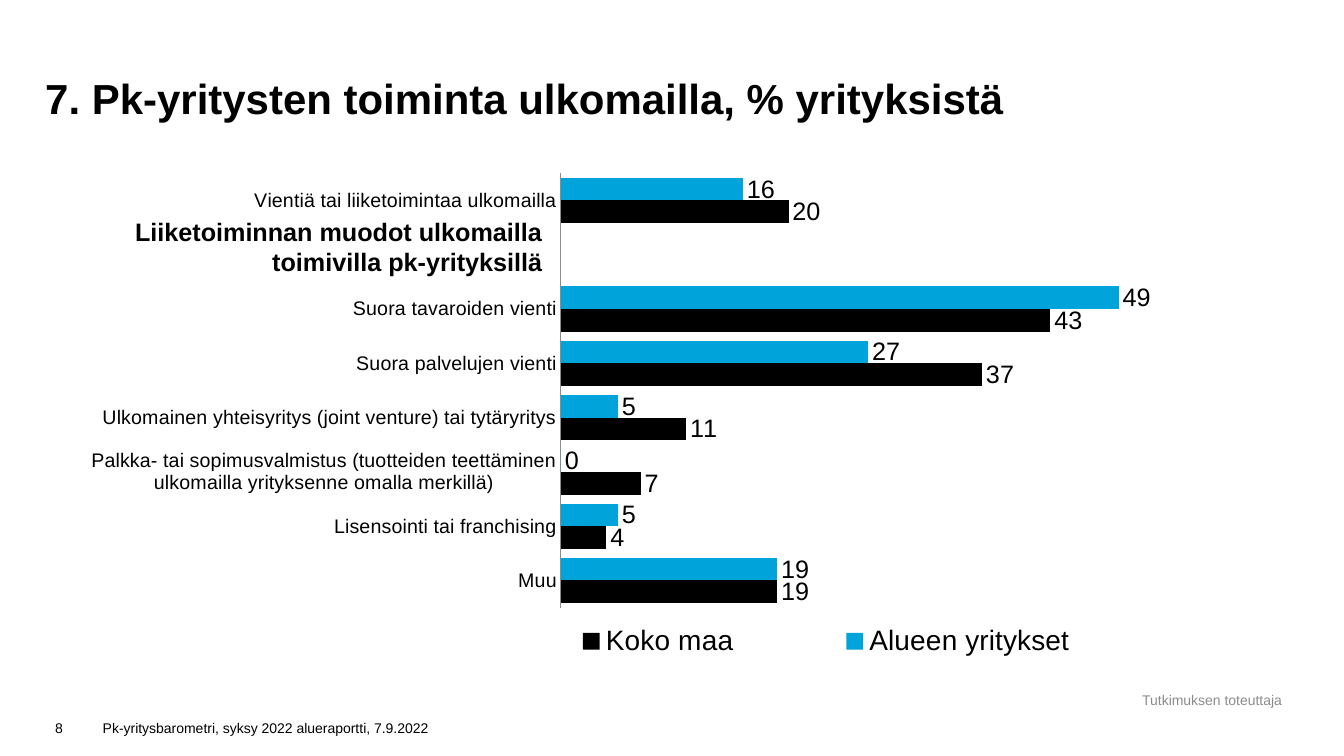
from lxml import etree
from pptx import Presentation, util as u
from pptx.chart.data import CategoryChartData
from pptx.dml.color import RGBColor
from pptx.enum import chart as ch, text as tx

THEME = {
    "font": "Arial",
    "black": RGBColor.from_string("000000"),
    "blue": RGBColor.from_string("00A3DA"),
    "grey": RGBColor.from_string("8C8C8C"),
    "title": u.Pt(30), "legend": u.Pt(20), "head": u.Pt(18),
    "label": u.Pt(14), "small": u.Pt(10),
}
LEFT, TOP, MID, LOW = (tx.PP_ALIGN.LEFT, tx.MSO_ANCHOR.TOP,
                       tx.MSO_ANCHOR.MIDDLE, tx.MSO_ANCHOR.BOTTOM)


def style(font, size, color="black", bold=False):
    form = {"name": THEME["font"], "size": THEME[size], "bold": bold}
    for key, value in form.items():
        setattr(font, key, value)
    font.color.rgb = THEME[color]


def place(parent, index, frame, inner=False):
    """Give a chart part a fixed frame, as shares of the chart's size."""
    for old in parent.findall("{*}layout"):
        parent.remove(old)
    space = etree.QName(parent).namespace
    layout = etree.Element(f"{{{space}}}layout")
    manual = etree.SubElement(layout, f"{{{space}}}manualLayout")
    rows = [("layoutTarget", "inner")] if inner else []
    rows += [("xMode", "edge"), ("yMode", "edge"), *zip("xywh", frame)]
    for tag, value in rows:
        etree.SubElement(manual, f"{{{space}}}{tag}").set("val", str(value))
    parent.insert(index, layout)


deck = Presentation()
deck.slide_width, deck.slide_height = u.Cm(33.87), u.Cm(19.05)
slide = deck.slides.add_slide(deck.slide_layouts[6])

# Chart
cats = [
    "Vientiä tai liiketoimintaa ulkomailla",
    "",
    "Suora tavaroiden vienti",
    "Suora palvelujen vienti",
    "Ulkomainen yhteisyritys (joint venture) tai tytäryritys",
    "Palkka- tai sopimusvalmistus (tuotteiden teettäminen "
    "ulkomailla yrityksenne omalla merkillä)",
    "Lisensointi tai franchising",
    "Muu",
]
series = [
    ("Alueen yritykset", "blue", [16, None, 49, 27, 5, 0, 5, 19]),
    ("Koko maa", "black", [20, None, 43, 37, 11, 7, 4, 19]),
]
data = CategoryChartData(number_format="#,##0")
data.categories = cats
for name, color, values in series:
    data.add_series(name, values)
chart = slide.shapes.add_chart(
    ch.XL_CHART_TYPE.BAR_CLUSTERED,
    u.Cm(1.14), u.Cm(3.94), u.Cm(31.24), u.Cm(13), data).chart
style(chart.font, "legend")
chart.has_title = False

plot = chart.plots[0]
for key, value in {"gap_width": 40, "overlap": 0,
                   "vary_by_categories": False}.items():
    setattr(plot, key, value)
for bars, (name, color, values) in zip(plot.series, series):
    bars.format.fill.solid()
    bars.format.fill.fore_color.rgb = THEME[color]
    labels = bars.data_labels
    for key, value in {"show_value": True, "number_format": "#,##0",
                       "number_format_is_linked": False,
                       "position": ch.XL_LABEL_POSITION.OUTSIDE_END}.items():
        setattr(labels, key, value)
    style(labels.font, "head")

axis = chart.category_axis
for key, value in {"reverse_order": True, "has_major_gridlines": False,
                   "major_tick_mark": ch.XL_TICK_MARK.NONE}.items():
    setattr(axis, key, value)
style(axis.tick_labels.font, "label")
axis.format.line.color.rgb = THEME["grey"]
axis.format.line.width = u.Pt(0.75)
for key, value in {"minimum_scale": 0, "maximum_scale": 60, "visible": False,
                   "has_major_gridlines": False}.items():
    setattr(chart.value_axis, key, value)

chart.has_legend = True
legend = chart.legend
legend.position = ch.XL_LEGEND_POSITION.RIGHT
legend.include_in_layout = False
style(legend.font, "legend")
area = axis._element.getparent()
place(area, 0, (0.416, 0.033, 0.551, 0.842), inner=True)
place(legend._element, 1, (0.35, 0.89, 0.56, 0.1))

# Texts: lines, frame in cm, size, colour, bold, alignment, anchor, inset
notes = [
    (["7. Pk-yritysten toiminta ulkomailla, % yrityksistä"],
     (1.14, 0, 31.24, 3.1), "title", "black", True, LEFT, LOW, False),
    (["Liiketoiminnan muodot ulkomailla", "toimivilla pk-yrityksillä"],
     (1.4, 5.33, 12.52, 1.8), "head", "black", True,
     tx.PP_ALIGN.RIGHT, TOP, True),
    (["Tutkimuksen toteuttaja"], (28.35, 17.32, 4.39, 0.66),
     "small", "grey", False, tx.PP_ALIGN.CENTER, MID, True),
    (["Pk-yritysbarometri, syksy 2022 alueraportti, 7.9.2022"],
     (2.34, 17.78, 10.59, 0.89), "small", "black", False, LEFT, LOW, True),
    (["8"], (1.14, 17.78, 1.19, 0.89),
     "small", "black", False, LEFT, LOW, True),
]
for lines, spot, size, color, bold, align, anchor, inset in notes:
    frame = slide.shapes.add_textbox(*map(u.Cm, spot)).text_frame
    frame.word_wrap = True
    frame.vertical_anchor = anchor
    if not inset:
        for side in ("left", "top", "right", "bottom"):
            setattr(frame, f"margin_{side}", 0)
    frame.text = "\n".join(lines)
    for para in frame.paragraphs:
        para.alignment = align
        style(para.runs[0].font, size, color, bold)

deck.save("out.pptx")
